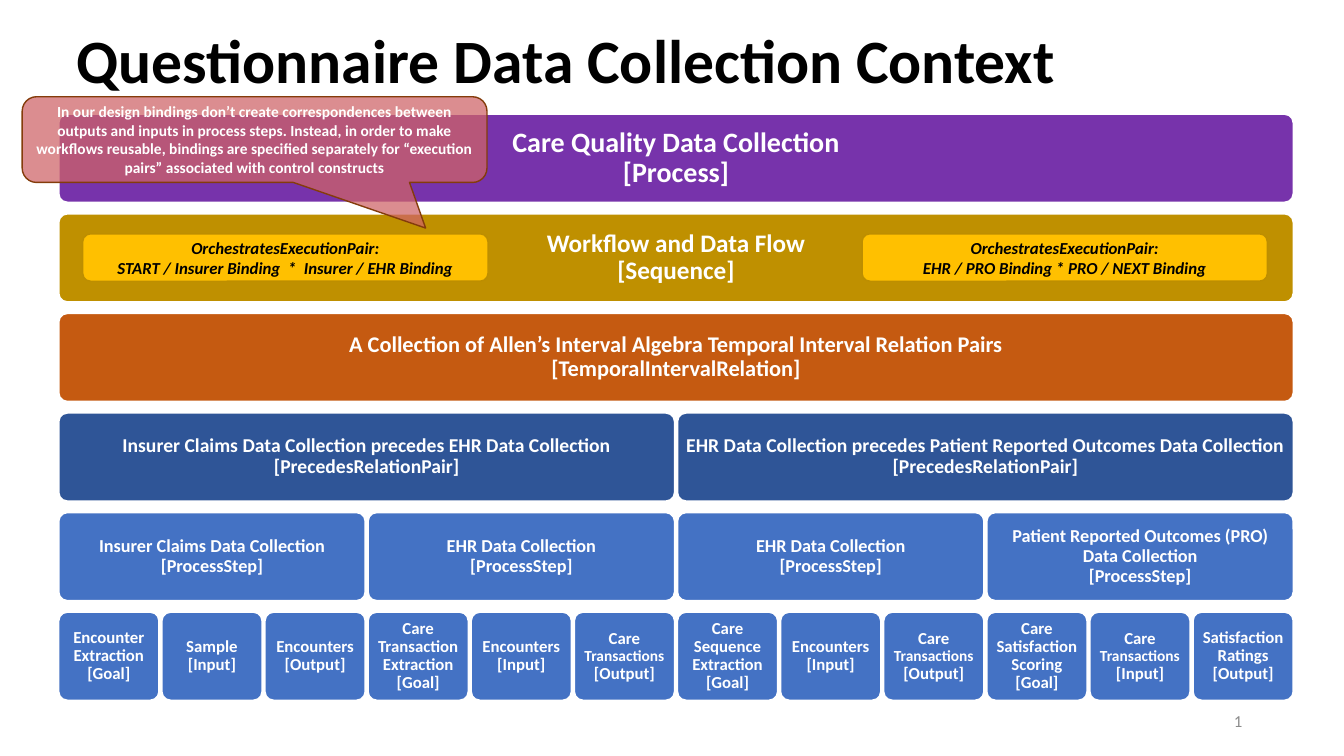
from copy import deepcopy

from lxml import etree
from pptx import Presentation
from pptx.dml.color import RGBColor
from pptx.enum.shapes import MSO_SHAPE as Preset
from pptx.enum.text import MSO_ANCHOR as Anchor, PP_ALIGN as Align
from pptx.oxml import parse_xml
from pptx.oxml.ns import nsdecls, qn
from pptx.util import Inches, Pt

LEFT, TOP = 0.58, 1.13
CELL_WIDTH, CELL_PITCH = 1, 11.25 / 11
ROW_HEIGHT, ROW_PITCH = 0.88, 4.94 / 5
BLUE, NAVY = "4472C4", "2F5597"

ROWS = [
    ("7733AB", 20, 0.08, ["Care Quality Data Collection\n[Process]"]),
    ("BF9000", 18, 0.07, ["Workflow and Data Flow\n[Sequence]"]),
    ("C55A11", 16, 0.07, [
        "A Collection of Allen’s Interval Algebra Temporal Interval Relation Pairs\n"
        "[TemporalIntervalRelation]"]),
    (NAVY, 14, 0.06, [
        "Insurer Claims Data Collection precedes EHR Data Collection\n[PrecedesRelationPair]",
        "EHR Data Collection precedes Patient Reported Outcomes Data Collection\n"
        "[PrecedesRelationPair]"]),
    (BLUE, 13, 0.05, [
        "Insurer Claims Data Collection\n[ProcessStep]",
        "EHR Data Collection\n[ProcessStep]",
        "EHR Data Collection\n[ProcessStep]",
        "Patient Reported Outcomes (PRO) Data Collection\n[ProcessStep]"]),
    (BLUE, 12, 0.05, [
        "Encounter Extraction\n[Goal]",
        "Sample\n[Input]",
        "Encounters\n[Output]",
        "Care Transaction Extraction\n[Goal]",
        "Encounters\n[Input]",
        "Care\nTransactions\n[Output]",
        "Care Sequence Extraction\n[Goal]",
        "Encounters\n[Input]",
        "Care\nTransactions\n[Output]",
        "Care Satisfaction Scoring [Goal]",
        "Care\nTransactions\n[Input]",
        "Satisfaction Ratings\n[Output]"]),
]

PAIRS = [
    (0.82, "OrchestratesExecutionPair:\nSTART / Insurer Binding  *  Insurer / EHR Binding"),
    (8.55, "OrchestratesExecutionPair:\nEHR / PRO Binding * PRO / NEXT Binding"),
]

CALLOUT = (
    "In our design bindings don’t create correspondences between outputs and inputs in process "
    "steps. Instead, in order to make workflows reusable, bindings are specified separately for "
    "“execution pairs” associated with control constructs"
)


def rgb(color):
    return RGBColor.from_string(color)


def write(frame, text, size, color="FFFFFF", bold=True, italic=False, align=Align.CENTER,
          spacing=1.0, inset=None, small_line=None):
    frame.word_wrap = True
    frame.vertical_anchor = Anchor.MIDDLE
    if inset is not None:
        frame.margin_left = frame.margin_right = Inches(inset)
        frame.margin_top = frame.margin_bottom = Inches(inset)
    paragraph = frame.paragraphs[0]
    paragraph.alignment = align
    paragraph.line_spacing = spacing
    lines = text.split("\n")
    for number, line in enumerate(lines, 1):
        run = paragraph.add_run()
        run.text = line
        font = run.font
        font.name, font.bold, font.italic = "Calibri", bold, italic
        font.size = Pt(size - 1 if line == small_line else size)
        font.color.rgb = rgb(color)
        if number < len(lines):
            paragraph.add_line_break()
            paragraph._p.findall(qn("a:br"))[-1].append(deepcopy(run._r.rPr))


def add_box(slide, preset, place, fill, line, weight, adjustments=()):
    box = slide.shapes.add_shape(preset, *map(Inches, place))
    box.shadow.inherit = False
    box.fill.solid()
    box.fill.fore_color.rgb = rgb(fill)
    box.line.color.rgb = rgb(line)
    box.line.width = Pt(weight)
    for index, value in enumerate(adjustments):
        box.adjustments[index] = value
    return box


def add_row(slide, row, fill, size, inset, labels):
    span = 12 // len(labels)
    width = (span - 1) * CELL_PITCH + CELL_WIDTH
    for column, label in enumerate(labels):
        place = (LEFT + column * span * CELL_PITCH, TOP + row * ROW_PITCH, width, ROW_HEIGHT)
        block = add_box(slide, Preset.ROUNDED_RECTANGLE, place, fill, "FFFFFF", 1.5, [0.1])
        write(block.text_frame, label, size, spacing=0.9, inset=inset,
              small_line="Transactions")


def add_pair(slide, left, label):
    pair = add_box(slide, Preset.ROUNDED_RECTANGLE, (left, 2.32, 4.02, 0.47),
                   "FFC000", "BD8E00", 1)
    write(pair.text_frame, label, 12, color="000000", italic=True)


def add_callout(slide):
    callout = add_box(slide, Preset.ROUNDED_RECTANGULAR_CALLOUT, (0.22, 0.96, 4.61, 0.85),
                      "CF6367", "843C0B", 1, [0.368, 1.033, 0.167])
    tint = callout._element.spPr.find(qn("a:solidFill"))[0]
    etree.SubElement(tint, qn("a:alpha")).set("val", "73000")
    write(callout.text_frame, CALLOUT, 11)


def add_page_number(slide):
    frame = slide.shapes.add_textbox(*map(Inches, (9.42, 6.95, 3, 0.4))).text_frame
    write(frame, "1", 12, color="8C8C8C", bold=False, align=Align.RIGHT)
    run = frame.paragraphs[0].runs[0]._r
    field = parse_xml(
        f'<a:fld {nsdecls("a")} id="{{B6F15528-21DE-4FAA-801E-634DDDAF4B2B}}" type="slidenum"/>')
    run.addprevious(field)
    field.extend(list(run))
    run.getparent().remove(run)


def add_title(slide):
    title = slide.shapes.title
    title.left, title.top, title.width, title.height = map(Inches, (0.66, 0.24, 12.18, 0.78))
    write(title.text_frame, "Questionnaire Data Collection Context", 44, color="000000",
          align=Align.LEFT, spacing=0.9)


def main():
    deck = Presentation()
    deck.slide_width, deck.slide_height = Inches(13.33), Inches(7.5)
    slide = deck.slides.add_slide(deck.slide_layouts[5])
    add_title(slide)
    for row, (fill, size, inset, labels) in enumerate(ROWS):
        add_row(slide, row, fill, size, inset, labels)
    add_page_number(slide)
    for left, label in PAIRS:
        add_pair(slide, left, label)
    add_callout(slide)
    deck.save("out.pptx")


if __name__ == "__main__":
    main()
